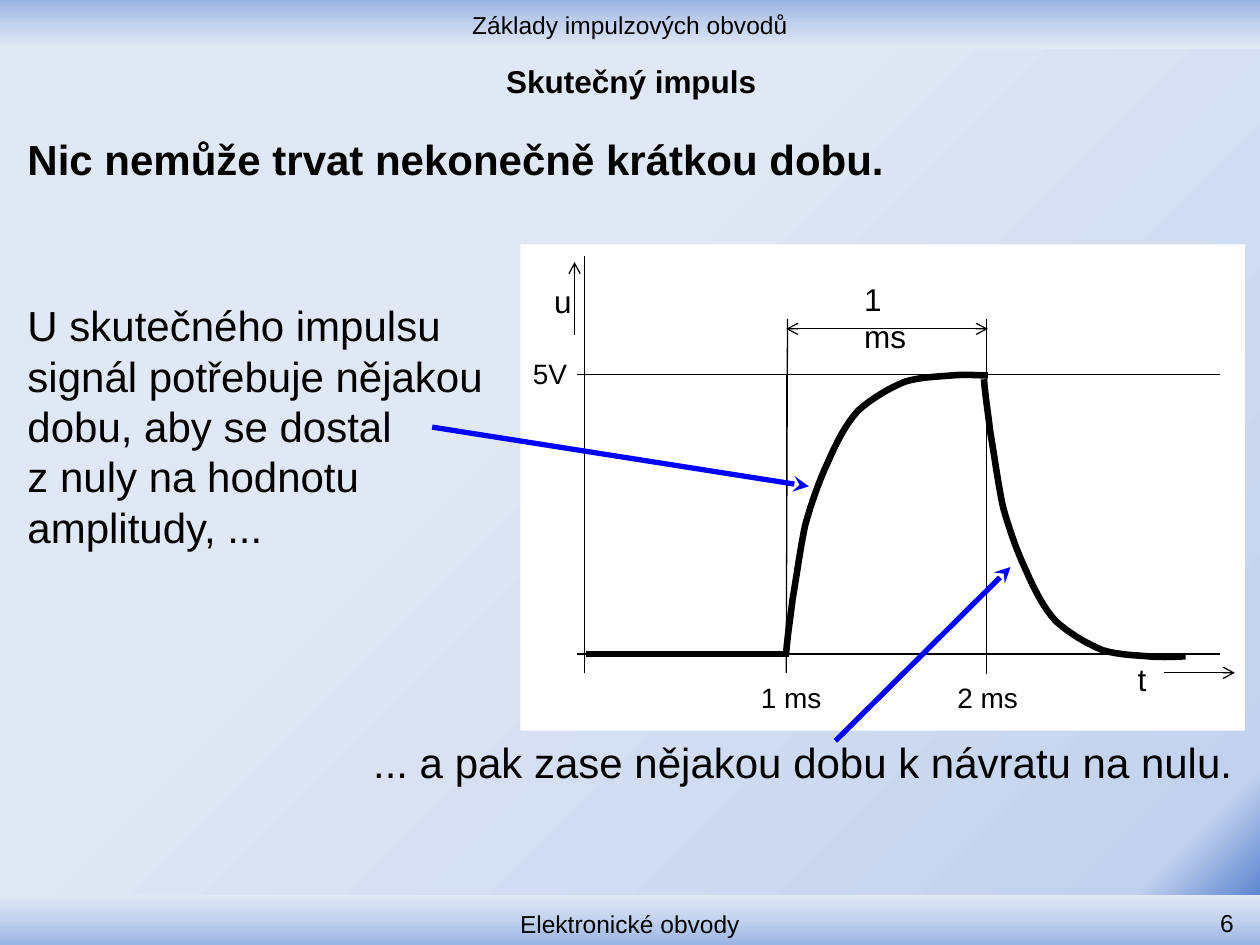
from lxml import etree
from pptx import Presentation
from pptx.dml.color import RGBColor
from pptx.enum.shapes import MSO_CONNECTOR, MSO_SHAPE
from pptx.enum.text import MSO_ANCHOR, MSO_AUTO_SIZE, PP_ALIGN
from pptx.oxml.ns import qn
from pptx.util import Pt

PX = 9144
FONT = "Arial"
BLACK = RGBColor(0x00, 0x00, 0x00)
WHITE = RGBColor(0xFF, 0xFF, 0xFF)
BLUE = RGBColor(0x00, 0x00, 0xFF)
DEEP = RGBColor(0x34, 0x68, 0xC5)
STEEL = RGBColor(0x9A, 0xB5, 0xE4)
SKY = RGBColor(0xC2, 0xD1, 0xED)
PALE = RGBColor(0xE1, 0xE8, 0xF5)
LEFT, CENTER, RIGHT = PP_ALIGN.LEFT, PP_ALIGN.CENTER, PP_ALIGN.RIGHT
TOP, MIDDLE, BOTTOM = MSO_ANCHOR.TOP, MSO_ANCHOR.MIDDLE, MSO_ANCHOR.BOTTOM
RECT, STRAIGHT = MSO_SHAPE.RECTANGLE, MSO_CONNECTOR.STRAIGHT

TITLE = "Skutečný impuls"
PAGE_STOPS = [(0, DEEP), (8, SKY), (60, PALE)]
BAR_STOPS = [(0, STEEL), (50, SKY), (100, PALE)]
PANEL = (413, 194, 575, 386)
BARS = [
    ("Základy impulzových obvodů", (0, 0, 1000, 39), MIDDLE, 90),
    ("Elektronické obvody", (0, 710, 1000, 40), BOTTOM, 270),
]
STATEMENTS = [
    (["Nic nemůže trvat nekonečně krátkou dobu."], (12, 101, 976, 50), 24, True, LEFT, TOP),
    (["... a pak zase nějakou dobu k návratu na nulu."], (12, 580, 976, 50), 24, False, RIGHT, TOP),
    (["U skutečného impulsu signál potřebuje nějakou dobu, aby se dostal",
      "z nuly na hodnotu amplitudy, ..."], (12, 233, 394, 212), 24, False, LEFT, TOP),
    (["6"], (933, 709, 56, 40), 14, False, RIGHT, BOTTOM),
]
GRAPH_LABELS = [
    ("u", (430, 219, 26, 37), 18),
    ("t", (893, 519, 26, 37), 18),
    ("5V", (413, 278, 51, 37), 16),
    ("1 ms", (594, 535, 69, 37), 16),
    ("2 ms", (750, 535, 69, 37), 16),
    ("1 ms", (676, 217, 59, 37), 18),
]
THIN, THICK, POINTER = 0.75, 3.75, 3
GRAPH_LINES = [
    ((625, 253), (624, 534), THIN, BLACK, None, None),
    ((783, 253), (783, 519), THIN, BLACK, None, None),
    ((464, 203), (464, 534), THIN, BLACK, None, None),
    ((458, 519), (968, 519), THIN, BLACK, None, None),
    ((924, 534), (980, 534), THIN, BLACK, None, "arrow"),
    ((456, 266), (456, 208), THIN, BLACK, None, "arrow"),
    ((458, 297), (968, 297), THIN, BLACK, None, None),
    ((465, 519), (626, 519), THICK, BLACK, None, None),
    ((624, 519), (624, 297), THIN, BLACK, None, None),
    ((625, 297), (786, 297), THIN, BLACK, None, None),
    ((783, 535), (783, 297), THIN, BLACK, None, None),
    ((624, 261), (784, 261), THIN, BLACK, "arrow", "arrow"),
]
POINTERS = [
    ((343, 339), (642, 386), POINTER, BLUE, None, "stealth"),
    ((663, 588), (802, 450), POINTER, BLUE, None, "stealth"),
]
RISING_EDGE = [
    (624, 518), (625, 505), (627, 493), (629, 476), (632, 459), (635, 436), (639, 417),
    (644, 399), (650, 382), (657, 367), (664, 351), (671, 337), (681, 326),
    (692, 316), (706, 308), (718, 303), (731, 299), (745, 299), (755, 298),
    (766, 297), (779, 298), (784, 298),
]
FALLING_EDGE = [(x + 157, 819 - y) for x, y in RISING_EDGE]
CURVE_STEPS = 8


def emu(lengths):
    return [round(length * PX) for length in lengths]


def set_gradient(fill, parent, stops, angle=None):
    fill.gradient()
    gradient = parent.find(".//" + qn("a:gradFill"))
    for child in list(gradient):
        gradient.remove(child)
    stop_list = etree.SubElement(gradient, qn("a:gsLst"))
    for position, color in stops:
        stop = etree.SubElement(stop_list, qn("a:gs"), pos=str(position * 1000))
        etree.SubElement(stop, qn("a:srgbClr"), val=str(color))
    if angle is None:
        shade = etree.SubElement(gradient, qn("a:path"), {"path": "circle"})
        etree.SubElement(shade, qn("a:fillToRect"), l="100000", t="100000")
    else:
        etree.SubElement(gradient, qn("a:lin"), ang=str(angle * 60000), scaled="0")


def write(frame, paragraphs, size, bold=False, align=LEFT, anchor=TOP):
    frame.word_wrap = True
    frame.vertical_anchor = anchor
    for index, text in enumerate(paragraphs):
        paragraph = frame.add_paragraph() if index else frame.paragraphs[0]
        paragraph.alignment = align
        run = paragraph.add_run()
        run.text = text
        run.font.name = FONT
        run.font.size = Pt(size)
        run.font.bold = bold
        run.font.color.rgb = BLACK


def add_rect(slide, box):
    rect = slide.shapes.add_shape(RECT, *emu(box))
    rect.shadow.inherit = False
    rect.line.fill.background()
    return rect


def add_text(slide, paragraphs, box, *style):
    frame = slide.shapes.add_textbox(*emu(box)).text_frame
    write(frame, paragraphs, *style)


def add_line(slide, start, end, width, color, head, tail):
    line = slide.shapes.add_connector(STRAIGHT, *emu(start + end))
    line.line.width = Pt(width)
    line.line.color.rgb = color
    outline = line.line._get_or_add_ln()
    for tag, arrow in (("a:headEnd", head), ("a:tailEnd", tail)):
        if arrow:
            etree.SubElement(outline, qn(tag), type=arrow)
    etree.SubElement(line._element.spPr, qn("a:effectLst"))


def bezier(a, b, c, d, t):
    s = 1 - t
    return s**3 * a + 3 * s * s * t * b + 3 * s * t * t * c + t**3 * d


def add_edge(slide, knots):
    points = []
    for first in range(0, len(knots) - 1, 3):
        xs, ys = zip(*knots[first:first + 4])
        for step in range(1, CURVE_STEPS + 1):
            t = step / CURVE_STEPS
            points.append(emu((bezier(*xs, t), bezier(*ys, t))))
    builder = slide.shapes.build_freeform(*emu(knots[0]))
    builder.add_line_segments(points, close=False)
    edge = builder.convert_to_shape()
    edge.shadow.inherit = False
    edge.fill.background()
    edge.line.color.rgb = BLACK
    edge.line.width = Pt(THICK)


def main():
    deck = Presentation()
    deck.slide_width, deck.slide_height = emu((1000, 750))
    slide = deck.slides.add_slide(deck.slide_layouts[5])
    set_gradient(slide.background.fill, slide._element, PAGE_STOPS)

    title = slide.shapes.title
    title.left, title.top, title.width, title.height = emu((51, 44, 900, 40))
    write(title.text_frame, [TITLE], 18, True, CENTER, MIDDLE)
    title.text_frame.auto_size = MSO_AUTO_SIZE.NONE

    panel = add_rect(slide, PANEL)
    panel.fill.solid()
    panel.fill.fore_color.rgb = WHITE
    for text, box, anchor, angle in BARS:
        bar = add_rect(slide, box)
        set_gradient(bar.fill, bar._element, BAR_STOPS, angle)
        write(bar.text_frame, [text], 14, False, CENTER, anchor)
    for statement in STATEMENTS:
        add_text(slide, *statement)
    for line in GRAPH_LINES:
        add_line(slide, *line)
    for text, box, size in GRAPH_LABELS:
        add_text(slide, [text], box, size)
    for knots in (RISING_EDGE, FALLING_EDGE):
        add_edge(slide, knots)
    for pointer in POINTERS:
        add_line(slide, *pointer)
    deck.save("out.pptx")


if __name__ == "__main__":
    main()
